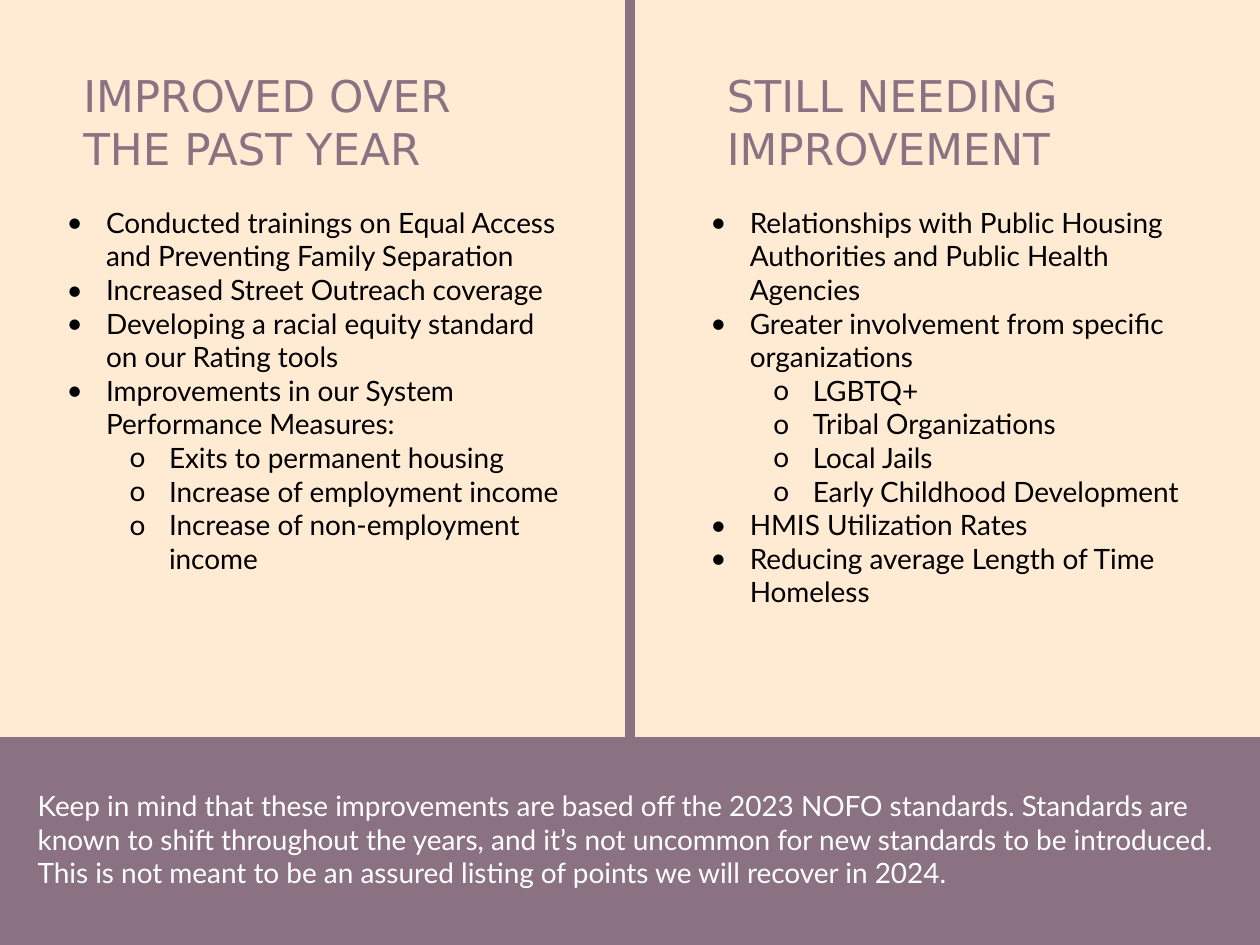
from dataclasses import dataclass

from lxml.etree import SubElement
from pptx import Presentation
from pptx.dml.color import RGBColor
from pptx.enum.shapes import MSO_CONNECTOR as CONN, MSO_SHAPE as SHAPE
from pptx.enum.text import MSO_ANCHOR as ANCHOR, MSO_AUTO_SIZE as FIT, PP_ALIGN as ALIGN
from pptx.oxml.ns import qn
from pptx.util import Pt


@dataclass(frozen=True)
class Theme:
    cream: RGBColor = RGBColor(0xFF, 0xEB, 0xD3)
    plum: RGBColor = RGBColor(0x8B, 0x72, 0x82)
    black: RGBColor = RGBColor(0, 0, 0)
    white: RGBColor = RGBColor(0xFF, 0xFF, 0xFF)
    heading_font: str = "DejaVu Sans"
    body_font: str = "Lato"
    heading_size: int = 25
    body_size: int = 16


@dataclass(frozen=True)
class Box:
    x: float
    y: float
    w: float
    h: float


THEME = Theme()
HEADING_STYLE = (THEME.heading_font, THEME.heading_size, THEME.plum)
LIST_STYLE = (THEME.body_font, THEME.body_size, THEME.black)
NOTE_STYLE = (THEME.body_font, THEME.body_size, THEME.white)

SLIDE_W, SLIDE_H = 720, 540
BAND_Y = 421.2
BULLETS = {1: "•", 2: "o"}

# Each list item: outline level, text
IMPROVED = [
    (1, "Conducted trainings on Equal Access and Preventing Family Separation"),
    (1, "Increased Street Outreach coverage"),
    (1, "Developing a racial equity standard on our Rating tools"),
    (1, "Improvements in our System Performance Measures:"),
    (2, "Exits to permanent housing"),
    (2, "Increase of employment income"),
    (2, "Increase of non-employment income"),
]
NEEDED = [
    (1, "Relationships with Public Housing Authorities and Public Health Agencies"),
    (1, "Greater involvement from specific organizations"),
    (2, "LGBTQ+"),
    (2, "Tribal Organizations"),
    (2, "Local Jails"),
    (2, "Early Childhood Development"),
    (1, "HMIS Utilization Rates"),
    (1, "Reducing average Length of Time Homeless"),
]
NOTE = (
    "Keep in mind that these improvements are based off the 2023 NOFO standards. "
    "Standards are known to shift throughout the years, and it’s not uncommon for "
    "new standards to be introduced. This is not meant to be an assured listing of "
    "points we will recover in 2024."
)


def place(sp, box):
    sp.left, sp.top, sp.width, sp.height = map(Pt, (box.x, box.y, box.w, box.h))


def add_text(slide, box):
    sp = slide.shapes.add_textbox(0, 0, 0, 0)
    place(sp, box)
    return sp


def write(sp, lines, style, anchor=ANCHOR.TOP):
    """Fill a text shape, one paragraph a line, and return the paragraphs."""
    font, size, color = style
    tf = sp.text_frame
    tf.word_wrap, tf.auto_size, tf.vertical_anchor = True, FIT.NONE, anchor
    for i, line in enumerate(lines):
        p = tf.add_paragraph() if i else tf.paragraphs[0]
        p.alignment = ALIGN.LEFT
        r = p.add_run()
        r.text = line
        r.font.name, r.font.size, r.font.color.rgb = font, Pt(size), color
    return tf.paragraphs


def set_bullet(p, level):
    p.level = level
    pPr = p._p.get_or_add_pPr()
    pPr.set("marL", str(Pt(22.5 + 36 * level)))
    pPr.set("indent", str(Pt(-22.5)))
    SubElement(pPr, qn("a:buFont")).set("typeface", THEME.body_font)
    SubElement(pPr, qn("a:buChar")).set("char", BULLETS[level])


def add_column(slide, box, heading, items, title=None):
    """Heading above a two-level list; the heading may be the slide title."""
    heading_box = Box(box.x + 45.4, box.y, box.w - 45.4, 70.6)
    if title is None:
        title = add_text(slide, heading_box)
    else:
        place(title, heading_box)
    write(title, heading, HEADING_STYLE, ANCHOR.BOTTOM)

    body = add_text(slide, Box(box.x, box.y + 81.4, box.w, box.h - 81.4))
    paragraphs = write(body, [text for _, text in items], LIST_STYLE)
    for p, (level, _) in zip(paragraphs, items):
        set_bullet(p, level)


def add_divider(slide, box):
    line = slide.shapes.add_connector(
        CONN.STRAIGHT, Pt(box.x), Pt(box.y), Pt(box.x), Pt(box.y + box.h))
    line.line.color.rgb = THEME.plum
    line.line.width = Pt(box.w)
    SubElement(line._element.spPr, qn("a:effectLst"))


def add_note_band(slide, box):
    band = slide.shapes.add_shape(SHAPE.RECTANGLE, 0, 0, 0, 0)
    place(band, box)
    band.shadow.inherit = False
    band.fill.solid()
    band.fill.fore_color.rgb = THEME.plum
    band.line.fill.background()
    note = add_text(slide, Box(box.x + 14.4, box.y + 25.9, box.w - 23, 65.5))
    write(note, [NOTE], NOTE_STYLE)


def main():
    prs = Presentation()
    prs.slide_width, prs.slide_height = Pt(SLIDE_W), Pt(SLIDE_H)
    slide = prs.slides.add_slide(prs.slide_layouts[5])
    slide.background.fill.solid()
    slide.background.fill.fore_color.rgb = THEME.cream

    # Divider first, so that the note band and its text lie over its foot
    add_divider(slide, Box(SLIDE_W / 2, 0, 6, 528.5))
    add_note_band(slide, Box(0, BAND_Y, SLIDE_W, SLIDE_H - BAND_Y))

    # Two columns
    left = Box(-5, 32.4, 336.3, 384.5)
    right = Box(left.x + 367.9, left.y, left.w, left.h)
    add_column(slide, left, ["IMPROVED OVER", "THE PAST YEAR"], IMPROVED,
               slide.shapes.title)
    add_column(slide, right, ["STILL NEEDING IMPROVEMENT"], NEEDED)

    prs.save("out.pptx")


if __name__ == "__main__":
    main()
